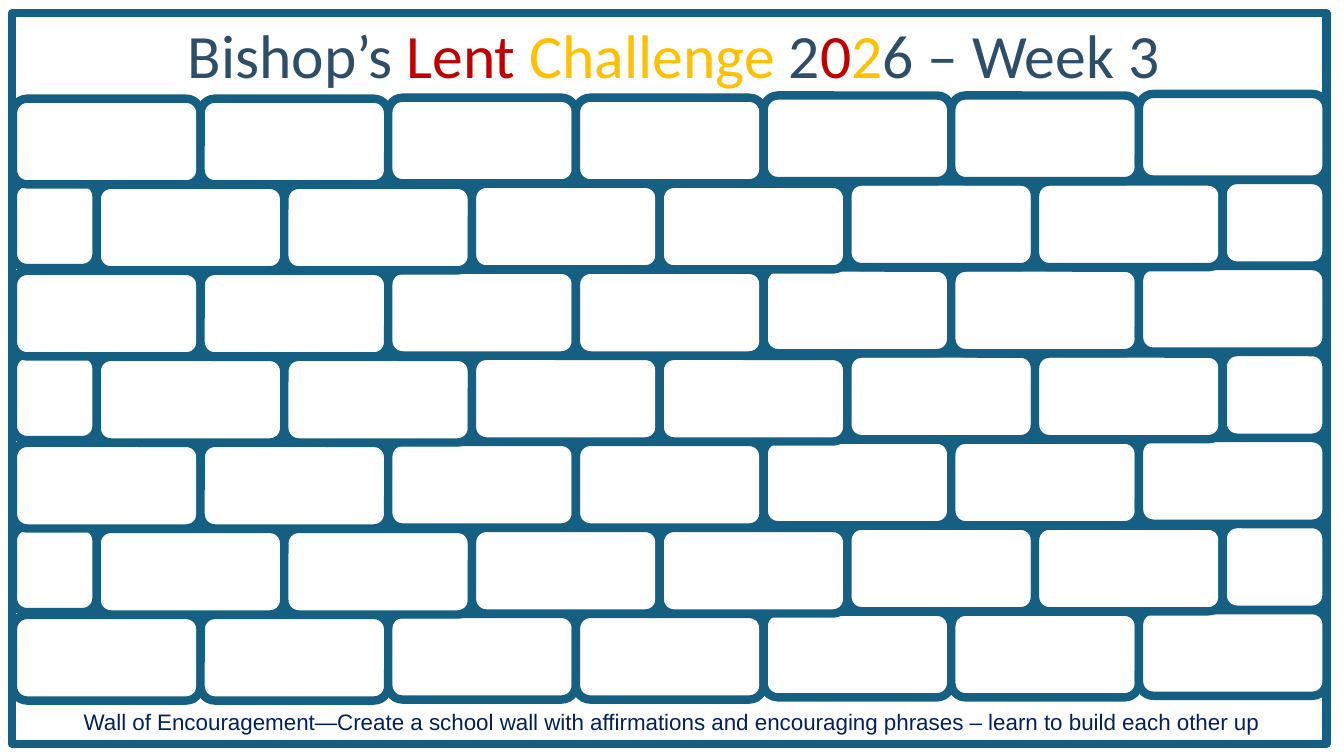
from pptx import Presentation
from pptx.dml.color import RGBColor
from pptx.enum.shapes import MSO_SHAPE
from pptx.enum.text import MSO_ANCHOR, PP_ALIGN
from pptx.util import Pt

NAVY, RED, GOLD = "2D4E6B", "C00000", "FFC000"


def rgb(value):
    return RGBColor.from_string(value)


class WallSlide:
    """Holds the slide and the style shared by the frame and the bricks."""
    fill = "FFFFFF"
    mortar = "156082"
    line_width = 6

    def __init__(self, prs):
        self.s = prs.slides.add_slide(prs.slide_layouts[6])

    def box(self, shapes, kind, x, y, w, h):
        sp = shapes.add_shape(kind, Pt(x), Pt(y), Pt(w), Pt(h))
        sp.shadow.inherit = False
        sp.fill.solid()
        sp.fill.fore_color.rgb = rgb(self.fill)
        sp.line.color.rgb = rgb(self.mortar)
        sp.line.width = Pt(self.line_width)

    def frame(self, x, y, w, h):
        self.box(self.s.shapes, MSO_SHAPE.RECTANGLE, x, y, w, h)

    def text(self, x, y, w, h, runs, font, size, spacing=None, after=0):
        """Add one centred line; runs are (text, colour) pairs."""
        sp = self.s.shapes.add_textbox(Pt(x), Pt(y), Pt(w), Pt(h))
        tf = sp.text_frame
        tf.word_wrap = True
        tf.vertical_anchor = MSO_ANCHOR.TOP
        p = tf.paragraphs[0]
        p.alignment = PP_ALIGN.CENTER
        p.line_spacing = spacing
        p.space_after = Pt(after)
        for words, colour in runs:
            r = p.add_run()
            r.text = words
            r.font.name = font
            r.font.size = Pt(size)
            r.font.color.rgb = rgb(colour)

    def wall(self, left, top, rows):
        """Stack rows of bricks from the bottom up, rising slightly to the right."""
        brick_w, brick_h, row_step = 134.06, 61.2, 61.45
        first_w, last_w = 59.8, 74.2
        rises = [0, 0, 0.7, 0.7, 2.3, 2.3, 3.4]
        shapes = self.s.shapes.add_group_shape().shapes
        for row in reversed(range(rows)):
            y = top + row * row_step
            staggered = row % 2 == 1
            start = left + first_w if staggered else left
            for i, rise in enumerate(rises):
                w = last_w if staggered and i == len(rises) - 1 else brick_w
                self.box(shapes, MSO_SHAPE.ROUNDED_RECTANGLE,
                         start + i * brick_w, y - rise, w, brick_h)
            if staggered:
                self.box(shapes, MSO_SHAPE.ROUNDED_RECTANGLE,
                         left, y - 1.7, first_w, brick_h)


def main():
    prs = Presentation()
    prs.slide_width, prs.slide_height = Pt(960), Pt(540)
    slide = WallSlide(prs)
    slide.frame(8.6, 9.4, 938.9, 522)
    slide.text(12.2, -1.4, 938.2, 98.6, [
        ("Bishop’s ", NAVY), ("Lent ", RED), ("Challenge ", GOLD),
        ("2", NAVY), ("0", RED), ("2", GOLD), ("6 – Week 3", NAVY),
    ], "Calibri", 44, spacing=1.19, after=6)
    slide.text(12.2, 502.6, 935.3, 26.6, [
        ("Wall of Encouragement—Create a school wall with affirmations and "
         "encouraging phrases – learn to build each other up", "002060"),
    ], "Arial", 16)
    slide.wall(9.2, 70.5, 7)
    prs.save("out.pptx")


if __name__ == "__main__":
    main()
